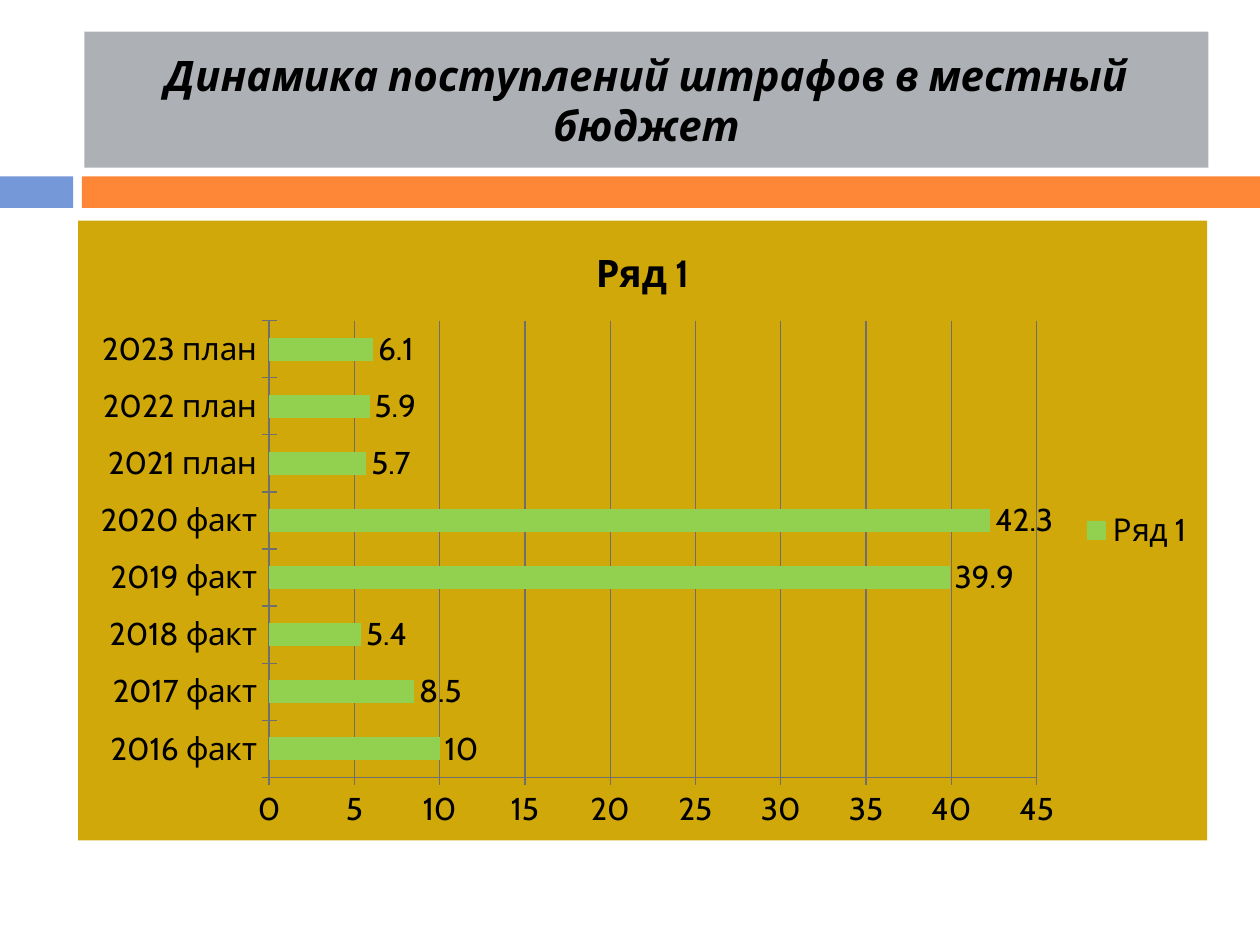
from lxml.etree import fromstring
from pptx import Presentation
from pptx.chart.data import CategoryChartData
from pptx.dml.color import RGBColor
from pptx.enum.chart import XL_CHART_TYPE, XL_LABEL_POSITION, XL_LEGEND_POSITION, XL_TICK_MARK
from pptx.enum.shapes import MSO_SHAPE
from pptx.enum.text import MSO_ANCHOR, MSO_AUTO_SIZE, PP_ALIGN
from pptx.util import Inches, Pt

THEME = {
    "font": "Cabin", "text": "000000", "title_fill": "ADB0B5",
    "blue": "7598D9", "orange": "FE8637",
    "chart_fill": "D0A80A", "bar": "92D050", "line": "6F6F6F",
    "title_size": 24, "chart_title_size": 21.6, "chart_size": 18,
}
W, H = 10, 7.5


def color(name):
    return RGBColor.from_string(THEME[name])


def style_font(font, size, **extra):
    values = {"name": THEME["font"], "size": Pt(THEME[size]), **extra}
    for key, value in values.items():
        setattr(font, key, value)
    font.color.rgb = color("text")


prs = Presentation()
prs.slide_width, prs.slide_height = Inches(W), Inches(H)
s = prs.slides.add_slide(prs.slide_layouts[5])

# Divider bands: a short blue one and a long orange one
band_top, band_h = Inches(1.4), Inches(0.25)
for left, right, fill in [(0, 0.58, "blue"), (0.65, W, "orange")]:
    sp = s.shapes.add_shape(MSO_SHAPE.RECTANGLE, Inches(left), band_top,
                            Inches(right - left), band_h)
    sp.shadow.inherit = False
    sp.fill.solid()
    sp.fill.fore_color.rgb = color(fill)
    sp.line.fill.background()

# Title
title = s.shapes.title
box = {"left": 0.67, "top": 0.25, "width": 8.92, "height": 1.08}
for key, value in box.items():
    setattr(title, key, Inches(value))
title.fill.solid()
title.fill.fore_color.rgb = color("title_fill")
tf = title.text_frame
tf.word_wrap, tf.auto_size = True, MSO_AUTO_SIZE.NONE
tf.vertical_anchor = MSO_ANCHOR.MIDDLE
p = tf.paragraphs[0]
p.alignment = PP_ALIGN.CENTER
r = p.add_run()
r.text = "Динамика поступлений штрафов в местный бюджет"
style_font(r.font, "title_size", bold=True, italic=True)

# Chart data: actual figures up to 2020, planned ones after
data = CategoryChartData()
data.categories = [f"{year} {'факт' if year <= 2020 else 'план'}" for year in range(2016, 2024)]
data.add_series("Ряд 1", [10, 8.5, 5.4, 39.9, 42.3, 5.7, 5.9, 6.1])
chart = s.shapes.add_chart(XL_CHART_TYPE.BAR_CLUSTERED, Inches(0.62), Inches(1.75),
                           Inches(8.96), Inches(4.92), data).chart
style_font(chart.font, "chart_size")

# Chart title and legend
chart.has_title = True
p = chart.chart_title.text_frame.paragraphs[0]
r = p.add_run()
r.text = "Ряд 1"
style_font(r.font, "chart_title_size", bold=True)
chart.has_legend = True
chart.legend.position = XL_LEGEND_POSITION.RIGHT
chart.legend.include_in_layout = False

# Axes
for axis in (chart.category_axis, chart.value_axis):
    axis.major_tick_mark = XL_TICK_MARK.CROSS
    axis.minor_tick_mark = XL_TICK_MARK.NONE
    axis.format.line.color.rgb = color("line")
    axis.format.line.width = Pt(0.75)
axis = chart.value_axis
for key, value in {"minimum_scale": 0, "maximum_scale": 45, "major_unit": 5,
                   "has_major_gridlines": True}.items():
    setattr(axis, key, value)
axis.major_gridlines.format.line.color.rgb = color("line")
axis.major_gridlines.format.line.width = Pt(0.75)

# Bars and value labels
plot = chart.plots[0]
plot.gap_width, plot.vary_by_categories = 150, False
bars = plot.series[0]
bars.format.fill.solid()
bars.format.fill.fore_color.rgb = color("bar")
labels = bars.data_labels
labels.show_value = True
labels.position = XL_LABEL_POSITION.OUTSIDE_END
style_font(labels.font, "chart_size")

# Chart background
chart_xml = chart.element.find("{*}chart")
chart_xml.addnext(fromstring(
    '<c:spPr xmlns:c="http://schemas.openxmlformats.org/drawingml/2006/chart" '
    'xmlns:a="http://schemas.openxmlformats.org/drawingml/2006/main">'
    f'<a:solidFill><a:srgbClr val="{THEME["chart_fill"]}"/></a:solidFill>'
    '<a:ln><a:noFill/></a:ln></c:spPr>'))

prs.save("out.pptx")
